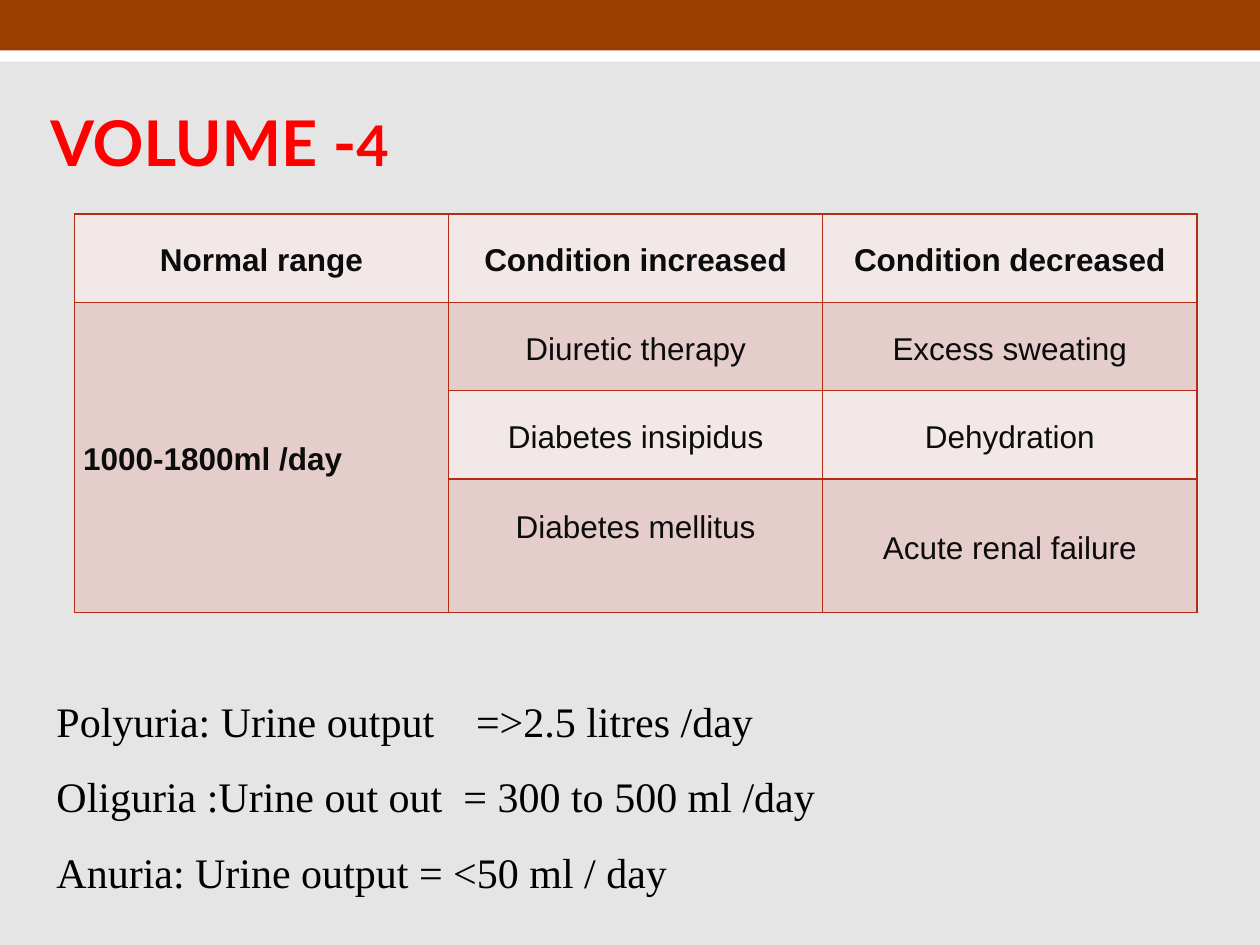
"""Build the urine volume slide: title, condition table and definitions."""
import pptx
import pptx.dml.color
import pptx.enum.shapes
import pptx.enum.text
import pptx.oxml.ns
import pptx.util
from lxml import etree

Inches, Pt = pptx.util.Inches, pptx.util.Pt
ALIGN, ANCHOR = pptx.enum.text.PP_ALIGN, pptx.enum.text.MSO_ANCHOR
qn = pptx.oxml.ns.qn

COLORS = {
    "background": "E5E5E5", "white": "FFFFFF", "band": "993D00", "title": "FF0000",
    "light": "F2E8E8", "dark": "E5CDCC", "border": "B32C16",
    "cell_text": "0C0C0C", "body": "000000",
}
BANDS = [("white", 0.24, 0.25), ("band", 0, 0.4)]
TITLE = [("VOLUME -", 36), ("4", 32)]
ROWS = [
    ("Normal range", "Condition increased", "Condition decreased"),
    ("1000-1800ml /day", "Diuretic therapy", "Excess sweating"),
    ("", "Diabetes insipidus", "Dehydration"),
    ("", "Diabetes mellitus", "Acute renal failure"),
]
ROW_HEIGHTS = [0.7, 0.7, 0.7, 1.06]
COLUMN_WIDTH = 2.97
BOTTOM_MARGINS = {"Diabetes mellitus": 0.33}
DEFINITIONS = [
    ("Polyuria: Urine output\t=>2.5 litres /day", 3.33),
    ("Oliguria :Urine out out\t= 300 to 500 ml /day", 3.23),
    ("Anuria: Urine output = <50 ml / day", None),
]


def color(name):
    return pptx.dml.color.RGBColor.from_string(COLORS[name])


def style(font, face, size, color_name, bold=False):
    font.name, font.size, font.bold = face, Pt(size), bold
    font.color.rgb = color(color_name)


def add_text_frame(slide, left, top, width, height):
    box = slide.shapes.add_textbox(Inches(left), Inches(top), Inches(width), Inches(height))
    box.text_frame.word_wrap = True
    return box.text_frame


def add_borders(cell):
    properties = cell._tc.get_or_add_tcPr()
    for side in ("lnL", "lnR", "lnT", "lnB"):
        line = etree.SubElement(properties, qn(f"a:{side}"), w=str(Pt(1)))
        fill = etree.SubElement(line, qn("a:solidFill"))
        etree.SubElement(fill, qn("a:srgbClr"), val=COLORS["border"])


def add_tab_stop(paragraph, position):
    stops = etree.SubElement(paragraph._p.get_or_add_pPr(), qn("a:tabLst"))
    etree.SubElement(stops, qn("a:tab"), pos=str(Inches(position)), algn="l")


def add_bands(slide):
    for name, top, height in BANDS:
        band = slide.shapes.add_shape(
            pptx.enum.shapes.MSO_SHAPE.RECTANGLE, 0, Inches(top), Inches(10), Inches(height))
        band.shadow.inherit = False
        band.fill.solid()
        band.fill.fore_color.rgb = color(name)
        band.line.fill.background()


def add_title(slide):
    frame = add_text_frame(slide, 0.2, 0.58, 9.3, 1.08)
    frame.vertical_anchor = ANCHOR.MIDDLE
    frame.margin_left = Inches(0.2)
    for text, size in TITLE:
        run = frame.paragraphs[0].add_run()
        run.text = text
        style(run.font, "Lato", size, "title", True)


def add_conditions(slide):
    columns = len(ROWS[0])
    table = slide.shapes.add_table(
        len(ROWS), columns, Inches(0.59), Inches(1.7),
        Inches(COLUMN_WIDTH * columns), Inches(sum(ROW_HEIGHTS))).table
    for column in table.columns:
        column.width = Inches(COLUMN_WIDTH)
    table.cell(1, 0).merge(table.cell(3, 0))
    for r, (texts, height) in enumerate(zip(ROWS, ROW_HEIGHTS)):
        table.rows[r].height = Inches(height)
        for c, text in enumerate(texts):
            cell = table.cell(r, c)
            add_borders(cell)
            cell.fill.solid()
            cell.fill.fore_color.rgb = color("dark" if r % 2 else "light")
            cell.vertical_anchor = ANCHOR.MIDDLE
            cell.margin_left = cell.margin_right = Inches(0.07)
            cell.margin_top = 0
            cell.margin_bottom = Inches(BOTTOM_MARGINS.get(text, 0))
            if text:
                paragraph = cell.text_frame.paragraphs[0]
                paragraph.text = text
                paragraph.line_spacing = 1.15
                paragraph.alignment = ALIGN.LEFT if r and not c else ALIGN.CENTER
                style(paragraph.font, "Arial", 18, "cell_text", r == 0 or c == 0)


def add_definitions(slide):
    frame = add_text_frame(slide, 0.35, 5.09, 9.13, 2.15)
    frame.margin_top = Inches(0.37)
    for i, (text, tab) in enumerate(DEFINITIONS):
        paragraph = frame.add_paragraph() if i else frame.paragraphs[0]
        paragraph.text = text
        paragraph.line_spacing = 1.15
        paragraph.space_after = Pt(10)
        if tab:
            add_tab_stop(paragraph, tab)
        style(paragraph.font, "Times New Roman", 24, "body")


def main():
    deck = pptx.Presentation()
    deck.slide_width, deck.slide_height = Inches(10), Inches(7.5)
    slide = deck.slides.add_slide(deck.slide_layouts[6])
    slide.background.fill.solid()
    slide.background.fill.fore_color.rgb = color("background")
    add_bands(slide)
    add_title(slide)
    add_definitions(slide)
    add_conditions(slide)
    deck.save("out.pptx")


if __name__ == "__main__":
    main()
